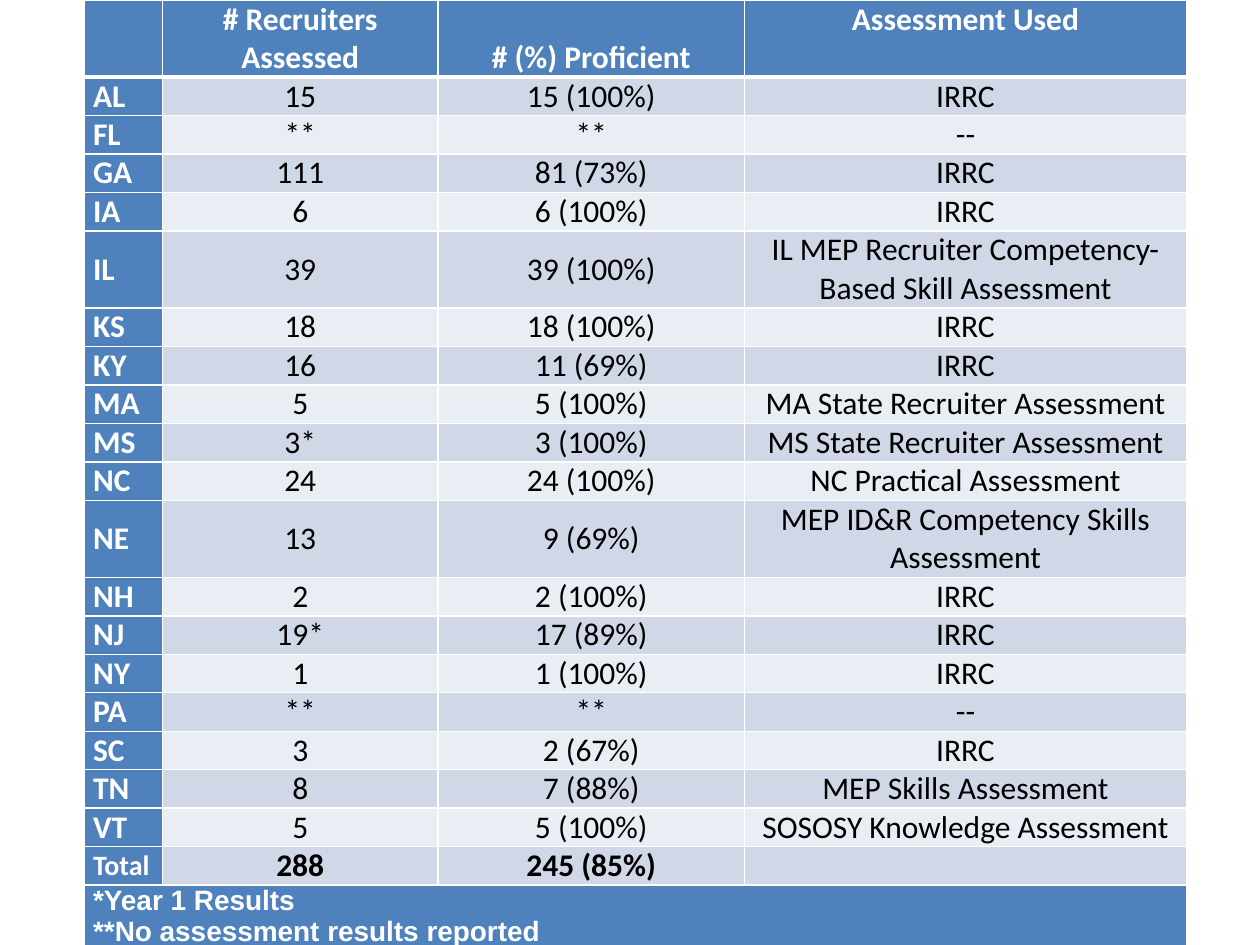
from dataclasses import dataclass

from lxml import etree
from pptx import Presentation
from pptx.dml.color import RGBColor
from pptx.enum.text import MSO_ANCHOR, PP_ALIGN
from pptx.oxml.ns import qn
from pptx.util import Pt


@dataclass(frozen=True)
class Theme:
    accent: str = "4F81BD"
    bands: tuple = ("E9EDF4", "D0D8E8")
    light: str = "FFFFFF"
    dark: str = "000000"
    font: str = "Calibri"
    note_font: str = "Arial"
    size: int = 18
    small: int = 16
    rule: int = 1
    header_rule: int = 3


THEME = Theme()
COLUMN_WIDTHS = (44.6, 157.6, 175, 252.8)
LINE_HEIGHT = 21.6
NOTE_HEIGHT = 38
CELL_INSET = 5

HEADER = ("", "# Recruiters Assessed", "# (%) Proficient", "Assessment Used")
STATES = [
    ("AL", "15", "15 (100%)", "IRRC"),
    ("FL", "**", "**", "--"),
    ("GA", "111", "81 (73%)", "IRRC"),
    ("IA", "6", "6 (100%)", "IRRC"),
    ("IL", "39", "39 (100%)", "IL MEP Recruiter Competency-Based Skill Assessment"),
    ("KS", "18", "18 (100%)", "IRRC"),
    ("KY", "16", "11 (69%)", "IRRC"),
    ("MA", "5", "5 (100%)", "MA State Recruiter Assessment"),
    ("MS", "3*", "3 (100%)", "MS State Recruiter Assessment"),
    ("NC", "24", "24 (100%)", "NC Practical Assessment"),
    ("NE", "13", "9 (69%)", "MEP ID&R Competency Skills Assessment"),
    ("NH", "2", "2 (100%)", "IRRC"),
    ("NJ", "19*", "17 (89%)", "IRRC"),
    ("NY", "1", "1 (100%)", "IRRC"),
    ("PA", "**", "**", "--"),
    ("SC", "3", "2 (67%)", "IRRC"),
    ("TN", "8", "7 (88%)", "MEP Skills Assessment"),
    ("VT", "5", "5 (100%)", "SOSOSY Knowledge Assessment"),
]
TOTAL = ("Total", "288", "245 (85%)", "")
NOTES = ("*Year 1 Results", "**No assessment results reported")
TWO_LINE_ROWS = ("", "IL", "NE")


def set_borders(cell, top, bottom):
    """Draw light rules on all four sides; must run before the fill is set."""
    tc_pr = cell._tc.get_or_add_tcPr()
    widths = {"lnL": THEME.rule, "lnR": THEME.rule, "lnT": top, "lnB": bottom}
    for side, width in widths.items():
        ln = etree.SubElement(tc_pr, qn(f"a:{side}"), w=str(Pt(width)))
        fill = etree.SubElement(ln, qn("a:solidFill"))
        etree.SubElement(fill, qn("a:srgbClr"), val=THEME.light)


def style_cell(cell, fill, anchor, top=THEME.rule, bottom=THEME.rule):
    set_borders(cell, top, bottom)
    cell.fill.solid()
    cell.fill.fore_color.rgb = RGBColor.from_string(fill)
    cell.margin_left = cell.margin_right = Pt(CELL_INSET)
    cell.margin_top = cell.margin_bottom = 0
    cell.vertical_anchor = anchor


def write(p, words, align, color, bold, size=THEME.size, font=THEME.font):
    p.alignment = align
    if not words:
        p.font.size = Pt(size)
        return
    r = p.add_run()
    r.text = words
    r.font.name = font
    r.font.size = Pt(size)
    r.font.bold = bold
    r.font.color.rgb = RGBColor.from_string(color)


def fill_header(table):
    anchors = (MSO_ANCHOR.TOP, MSO_ANCHOR.BOTTOM, MSO_ANCHOR.BOTTOM, MSO_ANCHOR.TOP)
    for c, (words, anchor) in enumerate(zip(HEADER, anchors)):
        cell = table.cell(0, c)
        style_cell(cell, THEME.accent, anchor, bottom=THEME.header_rule)
        write(cell.text_frame.paragraphs[0], words, PP_ALIGN.CENTER, THEME.light, True)


def fill_body_row(table, row, values):
    is_total = values is TOTAL
    top = THEME.header_rule if row == 1 else THEME.rule
    for c, words in enumerate(values):
        cell = table.cell(row, c)
        p = cell.text_frame.paragraphs[0]
        fill = THEME.bands[row % 2] if c else THEME.accent
        style_cell(cell, fill, MSO_ANCHOR.MIDDLE, top=top)
        if c:
            write(p, words, PP_ALIGN.CENTER, THEME.dark, is_total)
        else:
            size = THEME.small if is_total else THEME.size
            write(p, words, PP_ALIGN.LEFT, THEME.light, True, size)


def fill_notes(table, row):
    last = len(COLUMN_WIDTHS) - 1
    for c in range(last + 1):
        style_cell(table.cell(row, c), THEME.accent, MSO_ANCHOR.TOP)
    cell = table.cell(row, 0)
    cell.merge(table.cell(row, last))
    tf = cell.text_frame
    for i, words in enumerate(NOTES):
        p = tf.add_paragraph() if i else tf.paragraphs[0]
        write(p, words, PP_ALIGN.LEFT, THEME.light, True, THEME.small, THEME.note_font)


def add_results_table(slide, left, top):
    rows = [HEADER, *STATES, TOTAL]
    heights = [LINE_HEIGHT * (2 if r[0] in TWO_LINE_ROWS else 1) for r in rows]
    heights.append(NOTE_HEIGHT)
    frame = slide.shapes.add_table(
        len(heights), len(COLUMN_WIDTHS), Pt(left), Pt(top),
        Pt(sum(COLUMN_WIDTHS)), Pt(sum(heights)))
    table = frame.table
    table.horz_banding = False
    for column, width in zip(table.columns, COLUMN_WIDTHS):
        column.width = Pt(width)
    for row, height in zip(table.rows, heights):
        row.height = Pt(height)

    fill_header(table)
    for i, values in enumerate(rows[1:], start=1):
        fill_body_row(table, i, values)
    fill_notes(table, len(rows))


def main():
    prs = Presentation()
    prs.slide_width, prs.slide_height = Pt(720), Pt(540)
    slide = prs.slides.add_slide(prs.slide_layouts[6])
    add_results_table(slide, left=48.2, top=0)
    prs.save("out.pptx")


if __name__ == "__main__":
    main()
